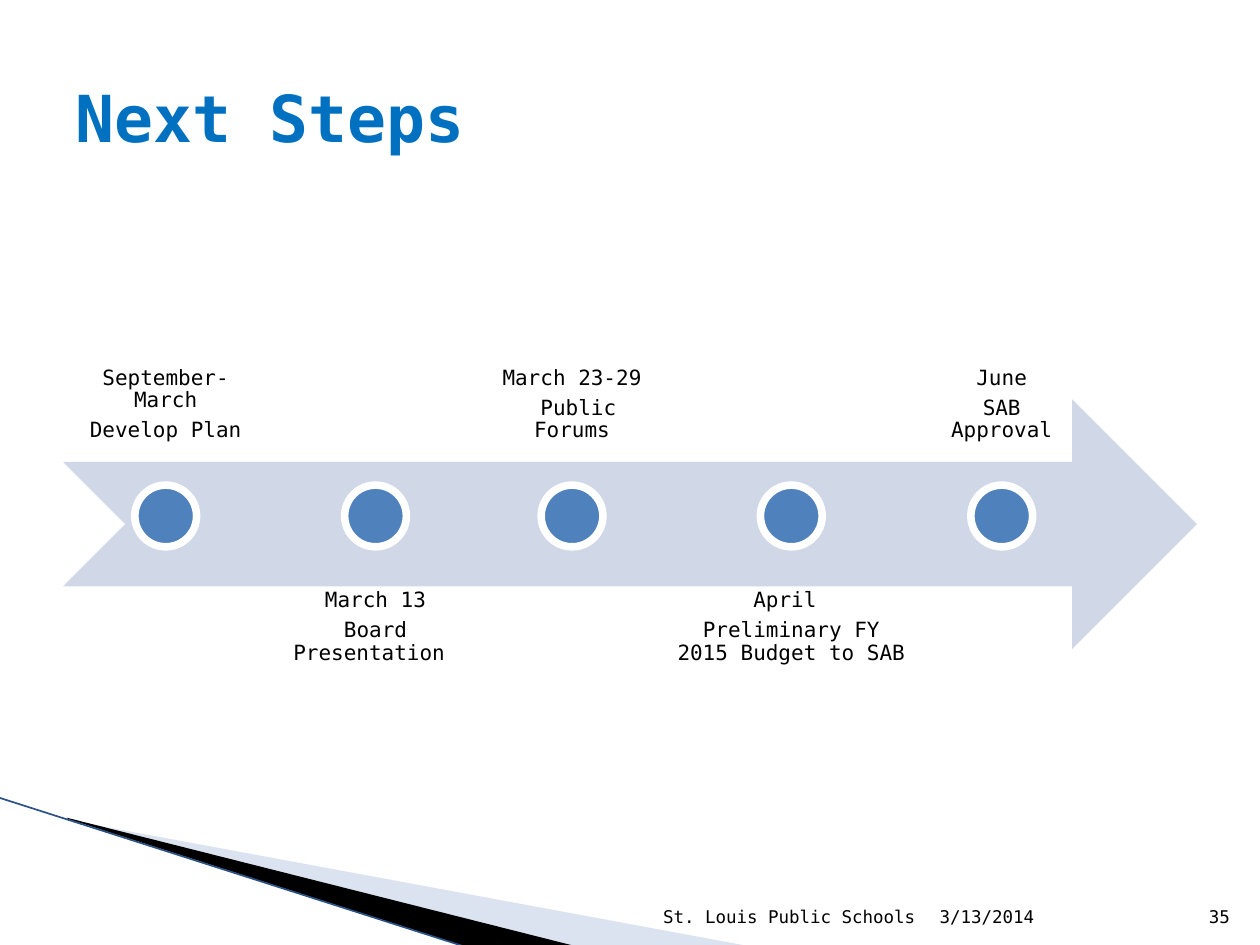
from lxml import etree
from pptx import Presentation
from pptx.dml.color import RGBColor
from pptx.enum.shapes import MSO_CONNECTOR, MSO_SHAPE
from pptx.enum.text import MSO_ANCHOR, PP_ALIGN
from pptx.oxml.ns import qn
from pptx.util import Inches, Pt

ARROW, OVAL = MSO_SHAPE.NOTCHED_RIGHT_ARROW, MSO_SHAPE.OVAL
TOP, MIDDLE, BOTTOM = MSO_ANCHOR.TOP, MSO_ANCHOR.MIDDLE, MSO_ANCHOR.BOTTOM
LEFT, CENTER, RIGHT = PP_ALIGN.LEFT, PP_ALIGN.CENTER, PP_ALIGN.RIGHT
BLACK = RGBColor(0x00, 0x00, 0x00)
WHITE = RGBColor(0xFF, 0xFF, 0xFF)
TITLE_BLUE = RGBColor(0x00, 0x70, 0xC0)
ARROW_BLUE = RGBColor(0xD0, 0xD8, 0xE8)
DOT_BLUE = RGBColor(0x4F, 0x81, 0xBD)
WEDGE_BLUE = RGBColor(0xA7, 0xB9, 0xDB)
EDGE_BLUE = RGBColor(0x2A, 0x52, 0x85)
FONT = "DejaVu Sans Mono"

deck = Presentation()
deck.slide_width, deck.slide_height = Inches(10), Inches(7.5)
page = deck.slides.add_slide(deck.slide_layouts[6])


def cells(*counts):
    """Turn counts of grid cells (100 columns by 75 rows) into lengths."""
    return [round(count * deck.slide_width / 100) for count in counts]


def add_text(area, lines, size, color=BLACK, align=LEFT, anchor=BOTTOM,
             bold=False, spacing=1.0, after=0):
    box = page.shapes.add_textbox(*cells(*area))
    frame = box.text_frame
    frame.word_wrap = True
    frame.vertical_anchor = anchor
    for index, line in enumerate(lines):
        para = frame.paragraphs[0] if index == 0 else frame.add_paragraph()
        para.alignment = align
        para.line_spacing = spacing
        para.space_after = Pt(after)
        span = para.add_run()
        span.text = line
        span.font.name = FONT
        span.font.size = Pt(size)
        span.font.bold = bold
        span.font.color.rgb = color
    return frame


# Corner wedges
wedges = [
    (WEDGE_BLUE, 40, [(5.5, 65.1), (59.5, 75.1), (45.6, 75.1), (5.5, 65)]),
    (BLACK, 100, [(5.3, 64.9), (45.7, 75.1), (37.2, 75.2), (5.4, 65)]),
]
for color, opacity, corners in wedges:
    points = [cells(*corner) for corner in corners]
    builder = page.shapes.build_freeform(*points[0])
    builder.add_line_segments(points[1:], close=True)
    wedge = builder.convert_to_shape()
    wedge.shadow.inherit = False
    wedge.fill.solid()
    wedge.fill.fore_color.rgb = color
    wedge.line.fill.background()
    if opacity < 100:
        tint = wedge.fill._xPr.find(".//" + qn("a:srgbClr"))
        etree.SubElement(tint, qn("a:alpha")).set("val", str(opacity * 1000))

edge = page.shapes.add_connector(MSO_CONNECTOR.STRAIGHT, *cells(-0.1, 63.3, 37.1, 75.2))
edge.line.color.rgb = EDGE_BLUE
edge.line.width = Pt(0.95)
etree.SubElement(edge._element.spPr, qn("a:effectLst"))

# Timeline: labels alternate above and below the arrow
arrow = page.shapes.add_shape(ARROW, *cells(5, 31.7, 90, 19.8))
arrow.shadow.inherit = False
arrow.fill.solid()
arrow.fill.fore_color.rgb = ARROW_BLUE
arrow.line.fill.background()

steps = [
    (16.3, ["September-March", "Develop Plan"]),
    (16.5, ["March 13", "Board Presentation "]),
    (14.2, ["March 23-29", " Public Forums"]),
    (20.1, ["April ", "Preliminary FY 2015 Budget to SAB"]),
    (12.8, ["June", "SAB Approval"]),
]
GAP, DOT, LABEL_HEIGHT = 0.25, 4.9, 19.8
left = 5
for index, (width, lines) in enumerate(steps):
    top, anchor = (16.2, BOTTOM) if index % 2 == 0 else (45.9, TOP)
    frame = add_text((left, top, width, LABEL_HEIGHT), lines, 12, align=CENTER,
                     anchor=anchor, spacing=0.9, after=4.2)
    (inset,) = cells(0.9)
    frame.margin_left = frame.margin_right = inset
    frame.margin_top = frame.margin_bottom = inset

    dot = page.shapes.add_shape(OVAL, *cells(left + (width - DOT) / 2, 38.5, DOT, DOT))
    dot.shadow.inherit = False
    dot.fill.solid()
    dot.fill.fore_color.rgb = DOT_BLUE
    dot.line.color.rgb = WHITE
    dot.line.width = Pt(4.33)
    left += width + GAP

# Title and footer
add_text((5, 3, 90, 12.5), ["Next Steps"], 37, TITLE_BLUE, anchor=MIDDLE, bold=True)
footer = [
    (73.6, 21, "3/13/2014", LEFT),
    (47.9, 25.7, "St. Louis Public Schools", RIGHT),
    (94.6, 4, "35", RIGHT),
]
for left, width, words, align in footer:
    add_text((left, 70.1, width, 4), [words], 10, align=align)

deck.save("out.pptx")
